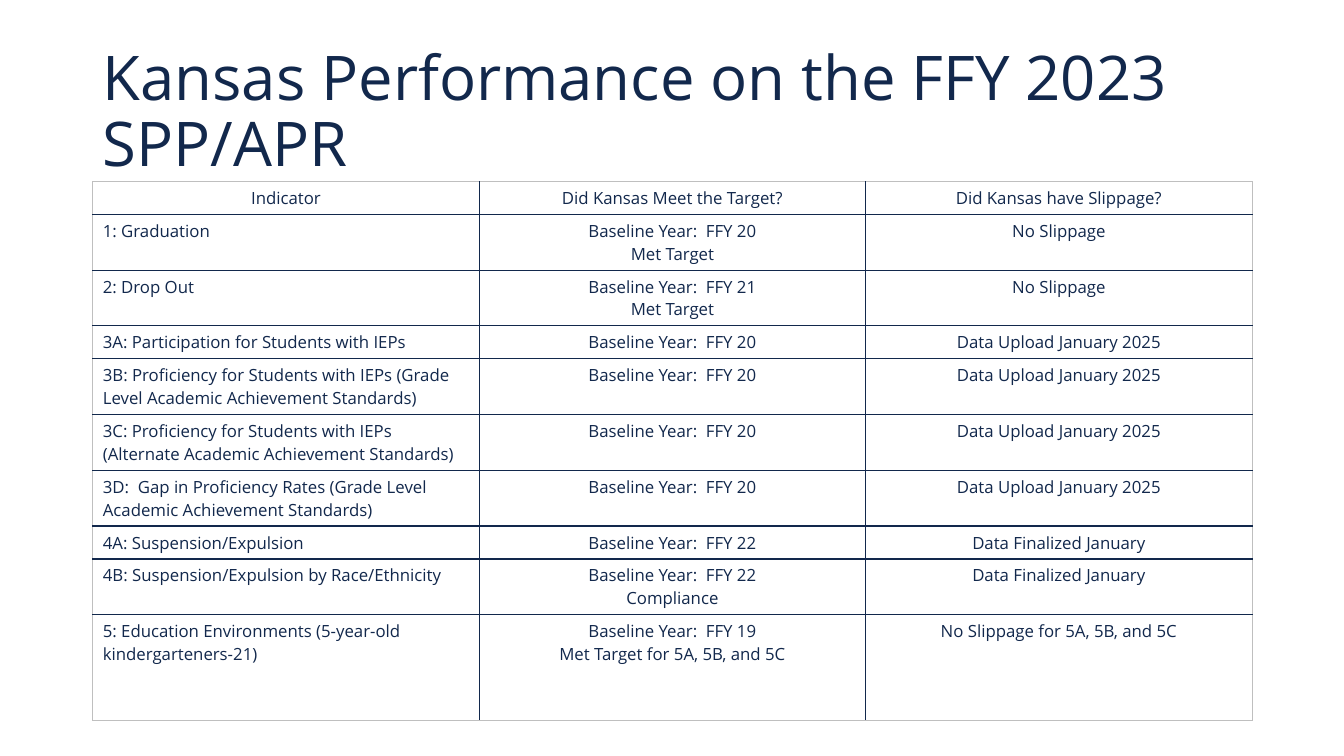
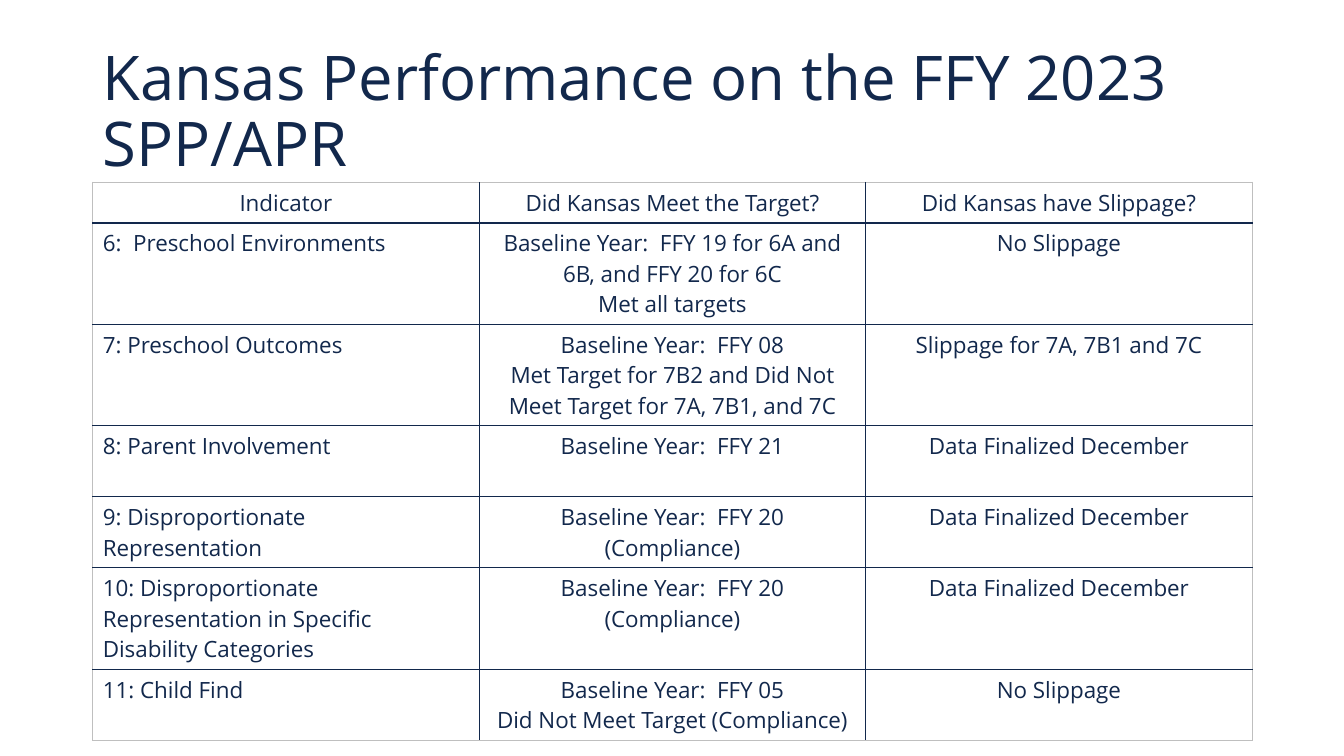
from lxml.etree import SubElement
from pptx import Presentation
from pptx.dml.color import RGBColor
from pptx.enum.text import MSO_ANCHOR, PP_ALIGN
from pptx.oxml.ns import qn
from pptx.util import Inches, Pt

COLORS = {"navy": "12284C", "outline": "BFBFBF"}
FONT = "Open Sans"
LEFT, WIDTH = 0.92, 11.5
LINE_SPACING = 1.36  # natural line height of the font, in ems
CELL_PADDING = 0.1   # top and bottom together, in inches

TITLE = "Kansas Performance on the FFY 2023 SPP/APR"
HEADINGS = (1, "Indicator", "Did Kansas Meet the Target?", "Did Kansas have Slippage?")

UPLOAD = "Data Upload January 2025"
JANUARY = "Data Finalized January"
DECEMBER = "Data Finalized December"

# Each row: height in text lines, indicator, target, slippage
SLIDES = [
    {"top": 1.8, "size": 12, "rows": [
        (2, "1: Graduation", "Baseline Year:  FFY 20\nMet Target", "No Slippage"),
        (2, "2: Drop Out", "Baseline Year:  FFY 21\nMet Target", "No Slippage"),
        (1, "3A: Participation for Students with IEPs", "Baseline Year:  FFY 20", UPLOAD),
        (2, "3B: Proficiency for Students with IEPs (Grade Level Academic Achievement Standards)",
         "Baseline Year:  FFY 20", UPLOAD),
        (2, "3C: Proficiency for Students with IEPs (Alternate Academic Achievement Standards)",
         "Baseline Year:  FFY 20", UPLOAD),
        (2, "3D:  Gap in Proficiency Rates (Grade Level Academic Achievement Standards)",
         "Baseline Year:  FFY 20", UPLOAD),
        (1, "4A: Suspension/Expulsion", "Baseline Year:  FFY 22", JANUARY),
        (2, "4B: Suspension/Expulsion by Race/Ethnicity",
         "Baseline Year:  FFY 22\nCompliance", JANUARY),
        (4.2, "5: Education Environments (5-year-old kindergarteners-21)",
         "Baseline Year:  FFY 19\nMet Target for 5A, 5B, and 5C",
         "No Slippage for 5A, 5B, and 5C"),
    ]},
    {"top": 1.81, "size": 16, "rows": [
        (3, "6:  Preschool Environments",
         "Baseline Year:  FFY 19 for 6A and 6B, and FFY 20 for 6C\nMet all targets",
         "No Slippage"),
        (3, "7: Preschool Outcomes",
         "Baseline Year:  FFY 08\n"
         "Met Target for 7B2 and Did Not Meet Target for 7A, 7B1, and 7C",
         "Slippage for 7A, 7B1 and 7C"),
        (2, "8: Parent Involvement", "Baseline Year:  FFY 21", DECEMBER),
        (2, "9: Disproportionate Representation",
         "Baseline Year:  FFY 20\n(Compliance)", DECEMBER),
        (3, "10: Disproportionate Representation in Specific Disability Categories",
         "Baseline Year:  FFY 20\n(Compliance)", DECEMBER),
        (2, "11: Child Find",
         "Baseline Year:  FFY 05\nDid Not Meet Target (Compliance)", "No Slippage"),
    ]},
]


def write(frame, text, size, align=PP_ALIGN.LEFT, spacing=None):
    """Fill a text frame, one paragraph per line of text."""
    for i, line in enumerate(text.split("\n")):
        paragraph = frame.add_paragraph() if i else frame.paragraphs[0]
        paragraph.alignment = align
        if spacing:
            paragraph.line_spacing = spacing
        run = paragraph.add_run()
        run.text = line
        run.font.name, run.font.size = FONT, Pt(size)
        run.font.color.rgb = RGBColor.from_string(COLORS["navy"])


def add_title(slide):
    box = slide.shapes.add_textbox(Inches(LEFT), Inches(0.4), Inches(WIDTH), Inches(1.45))
    frame = box.text_frame
    frame.word_wrap = True
    frame.vertical_anchor = MSO_ANCHOR.MIDDLE
    write(frame, TITLE, 44, spacing=0.9)


def set_borders(cell, outer_sides):
    """Draw navy rules between cells and a thin grey rule on outer sides."""
    properties = cell._tc.get_or_add_tcPr()
    for side in "LRTB":
        outer = side in outer_sides
        line = SubElement(properties, qn(f"a:ln{side}"), w=str(Pt(0.75 if outer else 1)))
        fill = SubElement(line, qn("a:solidFill"))
        SubElement(fill, qn("a:srgbClr"), val=COLORS["outline" if outer else "navy"])


def add_indicators(slide, top, size, rows):
    rows = [HEADINGS, *rows]
    columns = len(HEADINGS) - 1
    heights = [CELL_PADDING + lines * size * LINE_SPACING / 72 for lines, *_ in rows]
    table = slide.shapes.add_table(
        len(rows), columns, Inches(LEFT), Inches(top),
        Inches(WIDTH), Inches(sum(heights))).table
    table.horz_banding = False
    for r, (_, *texts) in enumerate(rows):
        table.rows[r].height = Inches(heights[r])
        for c, text in enumerate(texts):
            cell = table.cell(r, c)
            edges = {"L": c == 0, "R": c == columns - 1, "T": r == 0, "B": r == len(rows) - 1}
            set_borders(cell, [side for side, outer in edges.items() if outer])
            cell.fill.background()
            write(cell.text_frame, text, size,
                  PP_ALIGN.LEFT if r and c == 0 else PP_ALIGN.CENTER)
    table.first_row = False


def main():
    deck = Presentation()
    deck.slide_width, deck.slide_height = Inches(13.33), Inches(7.5)
    for content in SLIDES:
        slide = deck.slides.add_slide(deck.slide_layouts[6])
        add_title(slide)
        add_indicators(slide, **content)
    deck.save("out.pptx")


if __name__ == "__main__":
    main()
